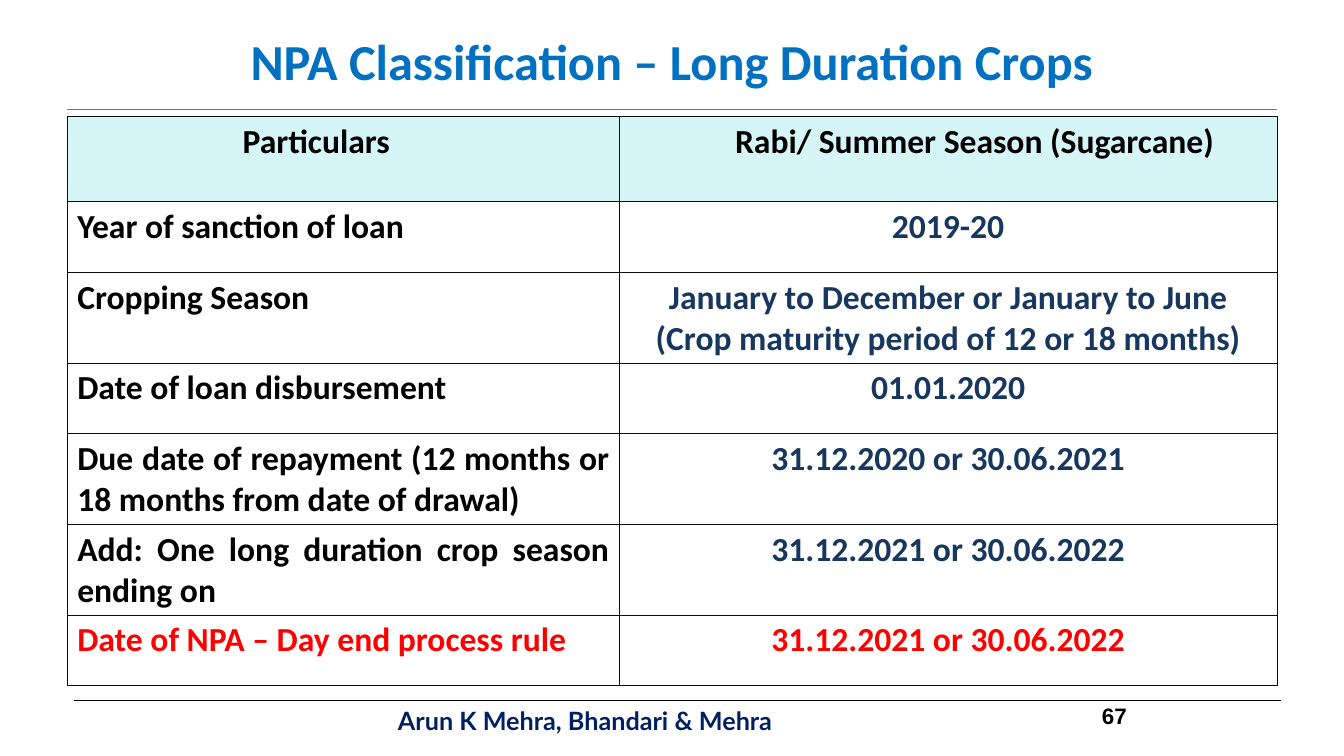
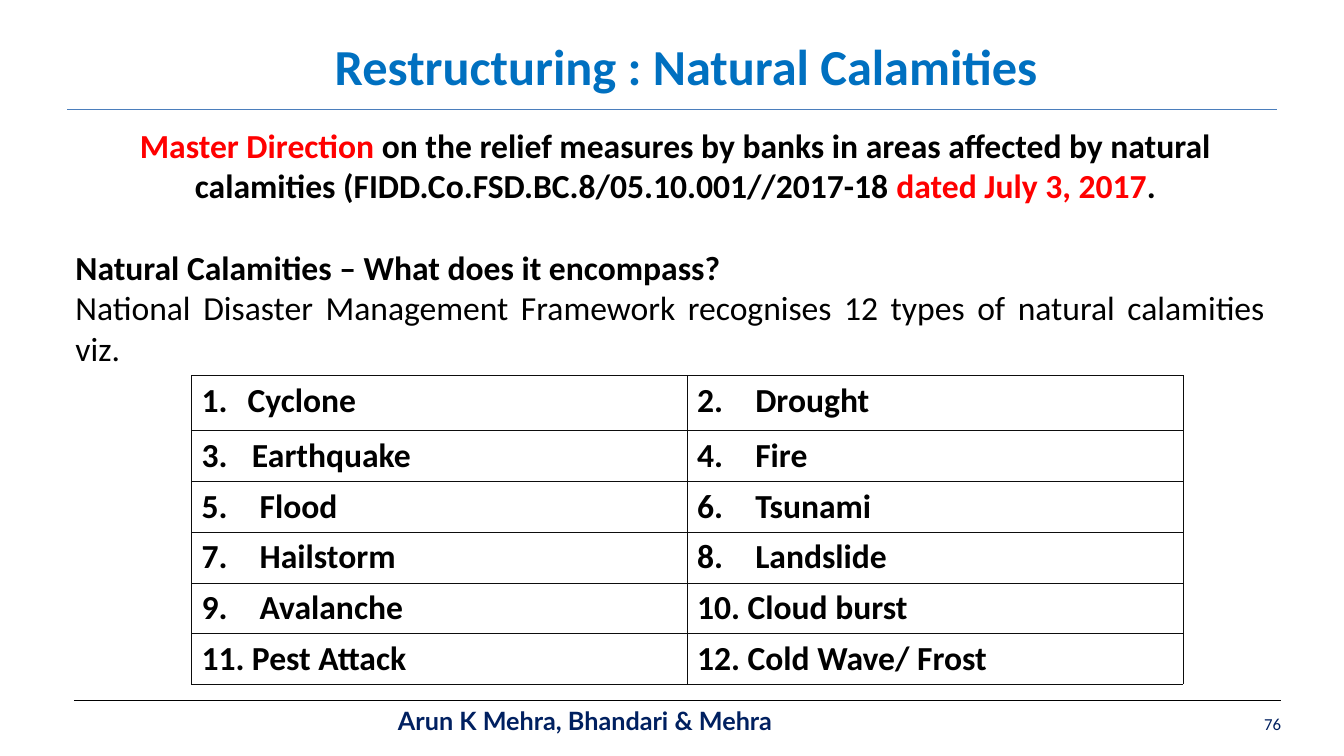
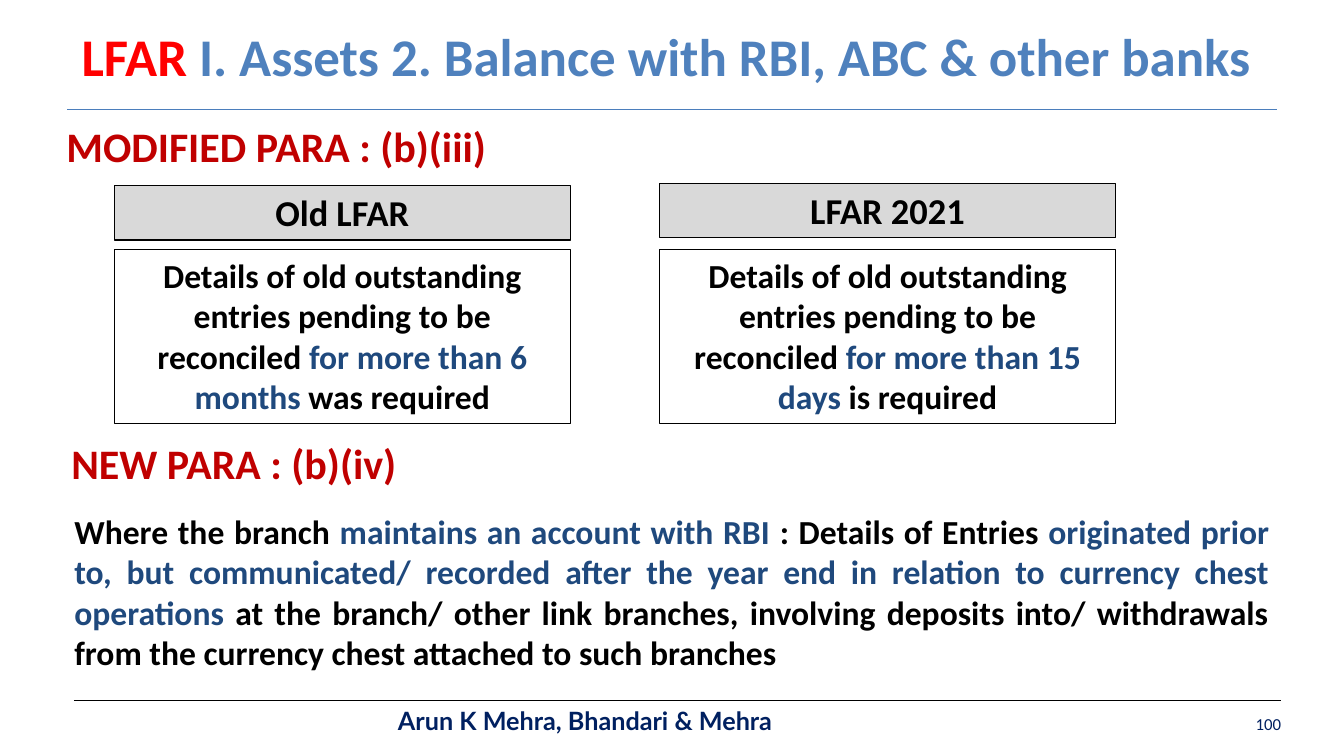
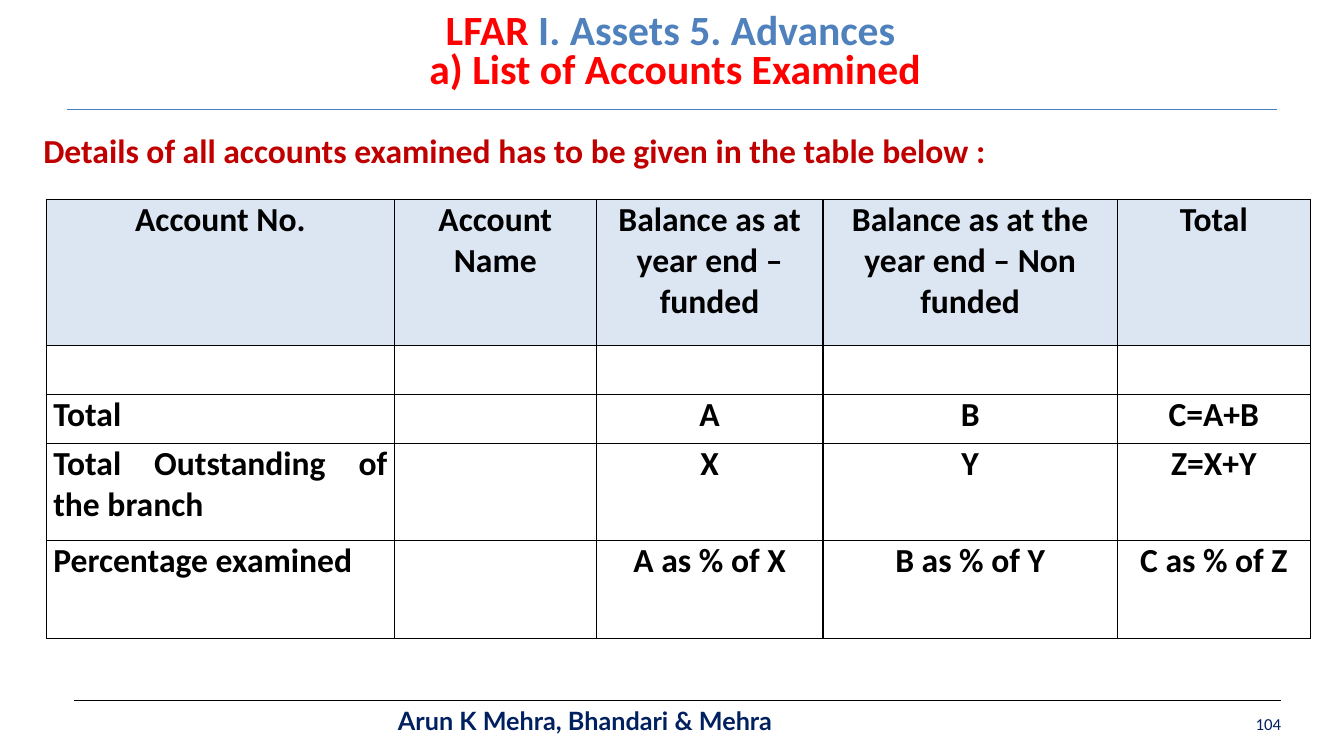
from lxml.etree import SubElement
from pptx import Presentation
from pptx.dml.color import RGBColor
from pptx.enum.shapes import MSO_CONNECTOR, MSO_SHAPE
from pptx.enum.text import MSO_ANCHOR, PP_ALIGN
from pptx.oxml.ns import qn
from pptx.util import Pt

# Shared colours
BLACK, WHITE, RED, DARK_RED = "000000", "FFFFFF", "FF0000", "C00000"
TITLE_BLUE, LFAR_BLUE, TEXT_BLUE = "0070C0", "4F81BD", "1F497D"
VALUE_BLUE, FOOTER_BLUE, RULE_BLUE = "17375E", "002060", "4B7EBC"
GREY, AQUA, PALE_BLUE, GRID = "D9D9D9", "D6F5F6", "DCE6F2", "0D0D0D"

LEFT, CENTER, RIGHT = PP_ALIGN.LEFT, PP_ALIGN.CENTER, PP_ALIGN.RIGHT
JUSTIFY = PP_ALIGN.JUSTIFY
FOOTER = "Arun K Mehra, Bhandari & Mehra"


def color(value):
    return RGBColor.from_string(value)


class Deck:
    """Holds the style and the current slide."""

    font = "Calibri"
    body_size = 24

    def __init__(self):
        self.presentation = Presentation()
        self.presentation.slide_width = Pt(960)
        self.presentation.slide_height = Pt(540)
        self.slide = None

    def new_slide(self):
        layout = self.presentation.slide_layouts[6]
        self.slide = self.presentation.slides.add_slide(layout)
        self.rule(48, 912, 78, RULE_BLUE)
        self.rule(52.8, 915.3, 500.5, BLACK)
        self.text_box(277.2, 506, 432.7, 17.3, [[(FOOTER, FOOTER_BLUE)]],
                      size=18, font="Lato", anchor=MSO_ANCHOR.MIDDLE)

    def page_number(self, number):
        self.text_box(668, 499.7, 254.2, 34.6, [[(number, FOOTER_BLUE, False)]],
                      size=12, align=RIGHT, anchor=MSO_ANCHOR.MIDDLE)

    def rule(self, left, right, top, line):
        connector = self.slide.shapes.add_connector(
            MSO_CONNECTOR.STRAIGHT, Pt(left), Pt(top), Pt(right), Pt(top))
        connector.line.color.rgb = color(line)
        connector.line.width = Pt(0.75)
        SubElement(connector._element.spPr, qn("a:effectLst"))

    def add_text(self, frame, paragraphs, size=body_size, align=LEFT, spacing=None, font=font):
        """Each paragraph is a list of (text, colour[, bold]) runs."""
        for index, runs in enumerate(paragraphs):
            paragraph = frame.add_paragraph() if index else frame.paragraphs[0]
            paragraph.alignment = align
            paragraph.line_spacing = spacing
            for text, shade, *bold in runs:
                run = paragraph.add_run()
                run.text = text
                run.font.name = font
                run.font.size = Pt(size)
                run.font.bold = bold[0] if bold else True
                run.font.color.rgb = color(shade)

    def text_box(self, left, top, width, height, paragraphs, anchor=MSO_ANCHOR.TOP, **style):
        shape = self.slide.shapes.add_textbox(Pt(left), Pt(top), Pt(width), Pt(height))
        shape.text_frame.word_wrap = True
        shape.text_frame.vertical_anchor = anchor
        self.add_text(shape.text_frame, paragraphs, **style)

    def box(self, left, top, width, height, runs, fill=WHITE, line=BLACK, **style):
        shape = self.slide.shapes.add_shape(
            MSO_SHAPE.RECTANGLE, Pt(left), Pt(top), Pt(width), Pt(height))
        shape.shadow.inherit = False
        shape.fill.solid()
        shape.fill.fore_color.rgb = color(fill)
        if line:
            shape.line.color.rgb = color(line)
            shape.line.width = Pt(0.75)
        else:
            shape.line.fill.background()
        shape.text_frame.word_wrap = True
        shape.text_frame.vertical_anchor = MSO_ANCHOR.TOP
        self.add_text(shape.text_frame, [runs], **style)

    def table(self, left, top, columns, rows, grid, grid_width):
        shape = self.slide.shapes.add_table(
            len(rows), len(columns), Pt(left), Pt(top), Pt(sum(columns)), Pt(sum(rows)))
        table = shape.table
        table.first_row = table.horz_banding = False
        for column, width in zip(table.columns, columns):
            column.width = Pt(width)
        for row, height in zip(table.rows, rows):
            row.height = Pt(height)
        for cell in table.iter_cells():
            self.borders(cell, grid, grid_width)
            cell.fill.background()
        return table

    def borders(self, cell, grid, width):
        properties = cell._tc.get_or_add_tcPr()
        for side in ("a:lnL", "a:lnR", "a:lnT", "a:lnB"):
            line = SubElement(properties, qn(side), w=str(Pt(width)))
            SubElement(SubElement(line, qn("a:solidFill")), qn("a:srgbClr"), val=grid)

    def cell(self, cell, text, shade=BLACK, fill=None, align=CENTER):
        if fill:
            cell.fill.solid()
            cell.fill.fore_color.rgb = color(fill)
        if text:
            self.add_text(cell.text_frame, [[(text, shade)]], align=align)

    def number(self, cell, start, indent, hanging):
        properties = cell.text_frame.paragraphs[0]._p.get_or_add_pPr()
        properties.set("marL", str(Pt(indent)))
        properties.set("indent", str(-Pt(hanging)))
        SubElement(properties, qn("a:buFont"), typeface="+mj-lt")
        SubElement(properties, qn("a:buAutoNum"), type="arabicPeriod", startAt=str(start))


def long_duration_crops(deck):
    deck.new_slide()
    deck.text_box(780, 498.2, 48, 24, [[("67", BLACK)]], size=16, font="Arial")
    deck.text_box(48, 18, 864, 65, [[("NPA Classification – Long Duration Crops", TITLE_BLUE)]],
                  size=36, align=CENTER)

    rows = [
        ("Particulars", "Rabi/ Summer Season (Sugarcane)"),
        ("Year of sanction of loan", "2019-20"),
        ("Cropping Season", "January to December or January to June "
                            "(Crop maturity period of 12 or 18 months)"),
        ("Date of loan disbursement", "01.01.2020"),
        ("Due date of repayment (12 months or 18 months from date of drawal)",
         "31.12.2020 or 30.06.2021"),
        ("Add: One long duration crop season ending on", "31.12.2021 or 30.06.2022"),
        ("Date of NPA – Day end process rule", "31.12.2021 or 30.06.2022"),
    ]
    last = len(rows) - 1
    table = deck.table(48, 83, [394.5, 469.5], [61] + [50.4] * last, GRID, 0.25)
    for index, (label, value) in enumerate(rows):
        header = index == 0
        fill = AQUA if header else None
        label_color = RED if index == last else BLACK
        value_color = BLACK if header else RED if index == last else VALUE_BLUE
        deck.cell(table.cell(index, 0), label, label_color, fill, CENTER if header else JUSTIFY)
        deck.cell(table.cell(index, 1), value, value_color, fill)
    # The two headings stand off centre, away from the middle line
    table.cell(0, 0).margin_right = Pt(46)
    table.cell(0, 1).margin_left = Pt(45)


def natural_calamities(deck):
    deck.new_slide()
    deck.page_number("76")
    deck.text_box(58.3, 21.6, 864, 53.3, [[("Restructuring : Natural Calamities", TITLE_BLUE)]],
                  size=36, align=CENTER)
    deck.text_box(50.4, 85.7, 864, 65.5, [[
        ("Master Direction", RED),
        (" on the relief measures by banks in areas affected by natural calamities "
         "(FIDD.Co.FSD.BC.8/05.10.001//2017-18 ", BLACK),
        ("dated July 3, 2017", RED), (".", BLACK)]], align=CENTER)
    deck.text_box(46.8, 172.8, 864, 94.3, [
        [("Natural Calamities – What does it encompass?", BLACK)],
        [("National Disaster Management Framework recognises 12 types of natural "
          "calamities viz.", BLACK, False)]], align=JUSTIFY)

    # Numbered calamities, two a row, with text indent and hanging indent
    narrow, plain, wide = (32.8, 27.4), (36, 36), (41.5, 36)
    calamities = [
        ("Cyclone", narrow), ("Drought", wide), ("Earthquake", plain), ("Fire", wide),
        ("Flood", wide), ("Tsunami", wide), ("Hailstorm", wide), ("Landslide", wide),
        ("Avalanche", wide), ("Cloud burst", plain), ("Pest Attack", plain),
        ("Cold Wave/ Frost", plain),
    ]
    # Equal text and hanging indents keep every number at the cell margin
    table = deck.table(136.8, 268, [354, 354], [39.6] + [36.2] * 5, GRID, 0.25)
    for index, (name, (indent, _)) in enumerate(calamities):
        cell = table.cell(*divmod(index, 2))
        deck.cell(cell, name, fill=WHITE, align=LEFT)
        deck.number(cell, index + 1, indent, indent)


def balance_with_banks(deck):
    deck.new_slide()
    deck.page_number("100")
    deck.text_box(41.8, 22.3, 868.3, 46, [[
        ("LFAR ", RED), ("I. Assets 2. Balance with RBI, ABC & other banks", LFAR_BLUE)]],
        size=37.8, align=CENTER, spacing=0.8)
    for left, top, heading in ((40.3, 82.8, "MODIFIED PARA : (b)(iii)"),
                               (43.9, 308.9, "NEW PARA : (b)(iv)")):
        deck.box(left, top, 880, 44, [(heading, DARK_RED)], line=None, size=30)

    # Old and new wording side by side
    for left, top, heading, period, ending in (
            (81.5, 132.5, "Old LFAR", "for more than 6 months ", "was required"),
            (471, 131, "LFAR 2021", "for more than 15 days", " is required")):
        deck.box(left, top, 326, 39, [(heading, BLACK)], fill=GREY, size=26, align=CENTER)
        deck.box(left, 178.5, 326, 124, [
            ("Details of old outstanding entries pending to be reconciled ", BLACK),
            (period, TEXT_BLUE), (ending, BLACK)], align=CENTER)

    deck.text_box(46, 361.4, 867.6, 124, [[
        ("Where the branch ", BLACK),
        ("maintains an account with RBI ", TEXT_BLUE),
        (": Details of Entries ", BLACK),
        ("originated prior to, but communicated/ recorded after the year end in relation "
         "to currency chest operations", TEXT_BLUE),
        (" at the branch/ other link branches, involving deposits into/ withdrawals from "
         "the currency chest attached to such branches", BLACK)]], align=JUSTIFY)


def accounts_examined(deck):
    deck.new_slide()
    deck.page_number("104")
    deck.text_box(36, 5.8, 886.3, 66.2, [
        [("LFAR ", RED), ("I. Assets 5. Advances", LFAR_BLUE)],
        [(" ", LFAR_BLUE), ("a) List of Accounts Examined", RED)]],
        size=29.7, align=CENTER, spacing=0.8)
    deck.text_box(23.8, 90, 797.8, 34.6, [[
        ("Details of all accounts examined has to be given in the table below :", DARK_RED)]],
        anchor=MSO_ANCHOR.MIDDLE)

    rows = [
        ("Account No.", "Account Name", "Balance as at year end – funded",
         "Balance as at the year end – Non funded", "Total"),
        ("",) * 5,
        ("Total", "", "A", "B", "C=A+B"),
        ("Total Outstanding of the branch", "", "X", "Y", "Z=X+Y"),
        ("Percentage examined", "", "A as % of X", "B as % of Y", "C as % of Z"),
    ]
    table = deck.table(33.1, 142.3, [248.6, 144.2, 162, 210.2, 137.9],
                       [104.4, 35, 35, 69.6, 69.6], BLACK, 1)
    for row, texts in enumerate(rows):
        for column, text in enumerate(texts):
            cell = table.cell(row, column)
            cell.margin_left = cell.margin_right = Pt(5)
            cell.margin_top = cell.margin_bottom = 0
            deck.cell(cell, text, fill=None if row else PALE_BLUE,
                      align=JUSTIFY if row and not column else CENTER)


def main():
    deck = Deck()
    long_duration_crops(deck)
    natural_calamities(deck)
    balance_with_banks(deck)
    accounts_examined(deck)
    deck.presentation.save("out.pptx")


if __name__ == "__main__":
    main()
